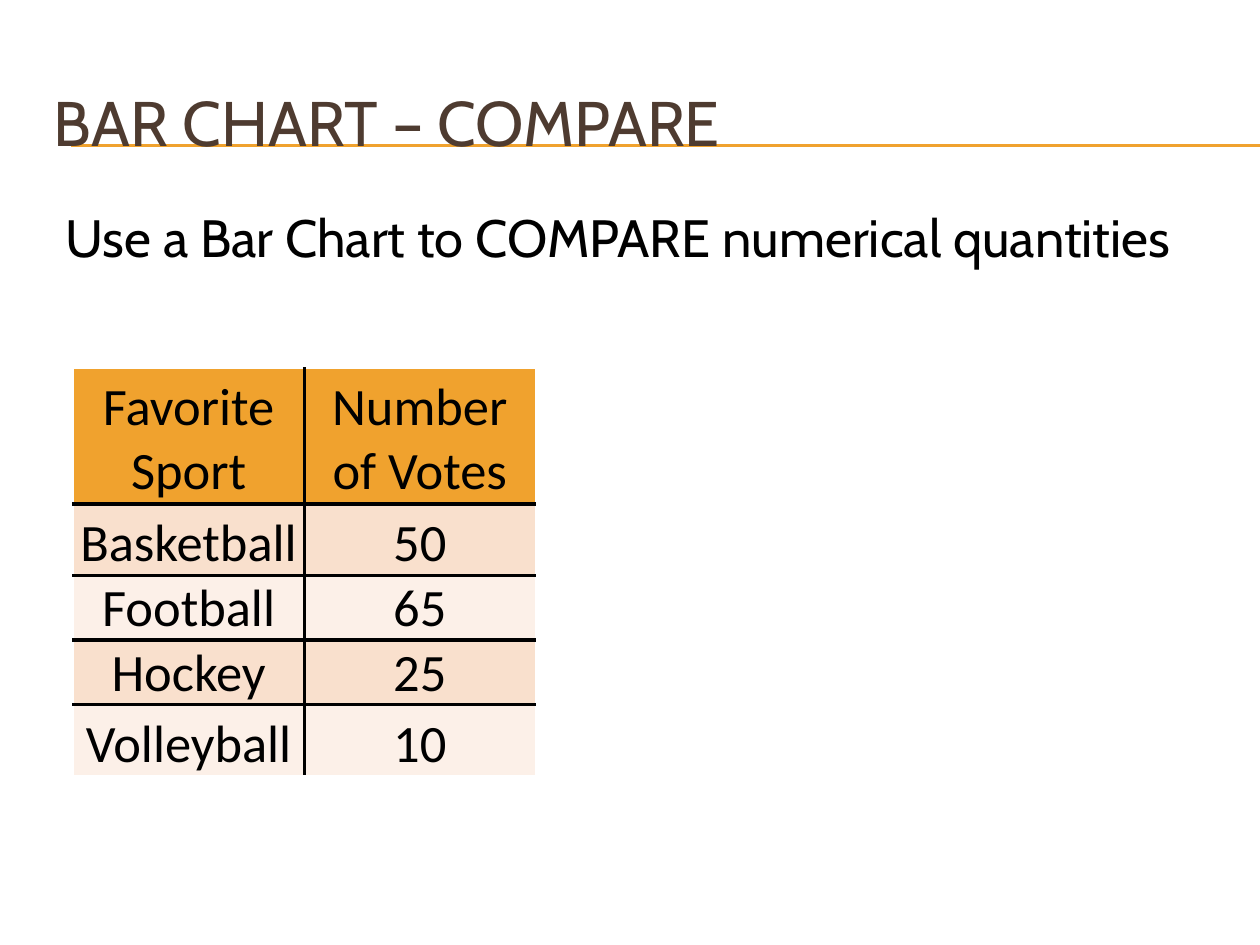
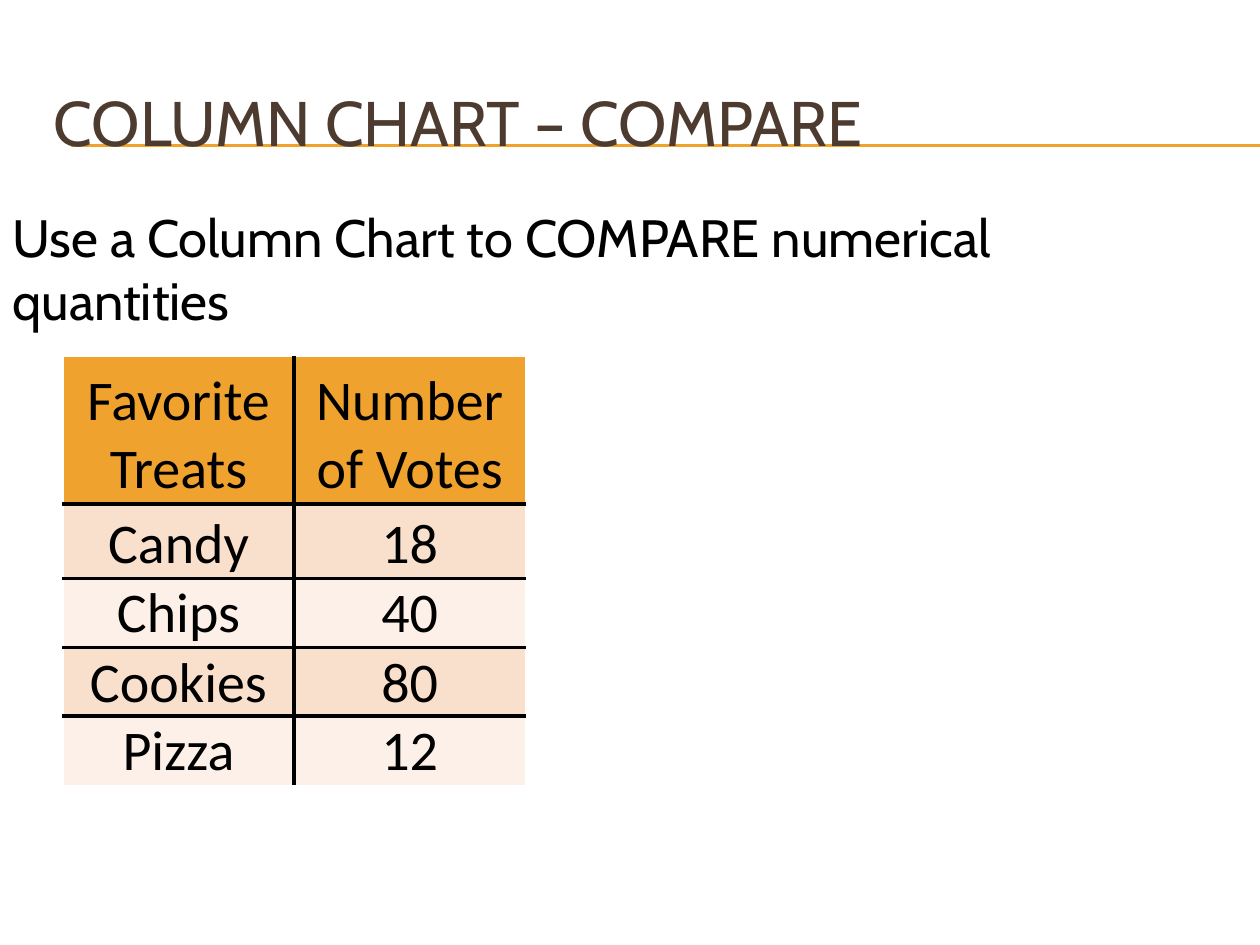
from lxml.etree import SubElement as Sub
from pptx import Presentation as Deck
from pptx.dml.color import RGBColor as Rgb
from pptx.enum.shapes import MSO_CONNECTOR as Conn
from pptx.enum.text import MSO_ANCHOR as Anchor, PP_ALIGN as Align
from pptx.oxml.ns import qn
from pptx.util import Inches, Pt

GOLD, BROWN, BLACK, WHITE = "F0A22E", "4E3B30", "000000", "FFFFFF"
BANDS = ["F9E0CD", "FCF0E8"]
INNER, OUTER = (BLACK, 2.25), (WHITE, 1)


def tint(code):
    return Rgb.from_string(code)


def apply(item, **vals):
    for name, val in vals.items():
        setattr(item, name, val)


class Page:
    """Holds the style and the current slide."""

    title_font = dict(name="Cabin", size=Pt(36), bold=False)
    body_font = dict(name="Cabin", size=Pt(30), bold=False)
    cell_font = dict(name="Calibri", bold=False)
    cell_fmt = dict(margin_left=Inches(0.01), margin_right=Inches(0.01),
                    margin_top=Inches(0.01), margin_bottom=0,
                    vertical_anchor=Anchor.BOTTOM)

    def __init__(self, deck):
        self.slide = deck.slides.add_slide(deck.slide_layouts[6])
        self.shapes = self.slide.shapes

    def rule(self, y):
        line = self.shapes.add_connector(
            Conn.STRAIGHT, Inches(0.56), Inches(y), Inches(10), Inches(y))
        line.line.width = Pt(0.75)
        line.line.color.rgb = tint(GOLD)
        Sub(line._element.spPr, qn("a:effectLst"))

    def text(self, words, box, font, color, anchor=Anchor.TOP):
        frame = self.shapes.add_textbox(*map(Inches, box)).text_frame
        apply(frame, word_wrap=True, vertical_anchor=anchor)
        run = frame.paragraphs[0].add_run()
        run.text = words
        apply(run.font, **font)
        run.font.color.rgb = tint(color)

    def title(self, words):
        for y in (1.15, 1.16):
            self.rule(y)
        self.text(words, (0.33, 0.5, 9.5, 0.92), self.title_font, BROWN,
                  Anchor.MIDDLE)

    def edge(self, cell, side, color, width):
        line = Sub(cell._tc.get_or_add_tcPr(), qn("a:ln" + side),
                   w=str(Pt(width)))
        fill = Sub(line, qn("a:solidFill"))
        Sub(fill, qn("a:srgbClr"), val=color)

    def cell(self, cell, words, fill, size, edges):
        # Borders come before the fill in the cell's XML
        for side, style in edges.items():
            self.edge(cell, side, *style)
        cell.fill.solid()
        cell.fill.fore_color.rgb = tint(fill)
        apply(cell, **self.cell_fmt)
        par = cell.text_frame.paragraphs[0]
        par.alignment = Align.CENTER
        run = par.add_run()
        run.text = words
        apply(run.font, size=Pt(size), **self.cell_font)
        run.font.color.rgb = tint(BLACK)

    def table(self, data, left, top, highs, size):
        rows, cols = len(data), len(data[0])
        spot = map(Inches, (left, top, 3.67, sum(highs)))
        table = self.shapes.add_table(rows, cols, *spot).table
        apply(table, first_row=False, horz_banding=False)
        for row, high in zip(table.rows, highs):
            row.height = Inches(high)
        for r, line in enumerate(data):
            fill = BANDS[(r - 1) % 2] if r else GOLD
            for c, words in enumerate(line):
                edges = {"L": INNER if c else OUTER,
                         "R": INNER if c < cols - 1 else OUTER,
                         "T": INNER if r else OUTER,
                         "B": INNER if r < rows - 1 else OUTER}
                self.cell(table.cell(r, c), words, fill, size, edges)


def main():
    deck = Deck()
    apply(deck, slide_width=Inches(10), slide_height=Inches(7.5))

    # Bar chart slide
    page = Page(deck)
    page.title("BAR CHART – COMPARE")
    sports = [("Favorite Sport", "Number of Votes"), ("Basketball", "50"),
              ("Football", "65"), ("Hockey", "25"), ("Volleyball", "10")]
    page.table(sports, 0.58, 2.92, [1.08, 0.57, 0.5, 0.49, 0.57], 30)
    page.text("Use a Bar Chart to COMPARE numerical quantities",
              (0.42, 1.58, 9, 0.61), page.body_font, BLACK)

    # Column chart slide
    page = Page(deck)
    page.title("COLUMN CHART – COMPARE")
    treats = [("Favorite Treats", "Number of Votes"), ("Candy", "18"),
              ("Chips", "40"), ("Cookies", "80"), ("Pizza", "12")]
    page.table(treats, 0.5, 2.83, [1.17, 0.59, 0.55, 0.54, 0.55], 32)
    page.text("Use a Column Chart to COMPARE numerical quantities",
              (0, 1.58, 9.75, 0.61), page.body_font, BLACK)

    deck.save("out.pptx")


if __name__ == "__main__":
    main()
